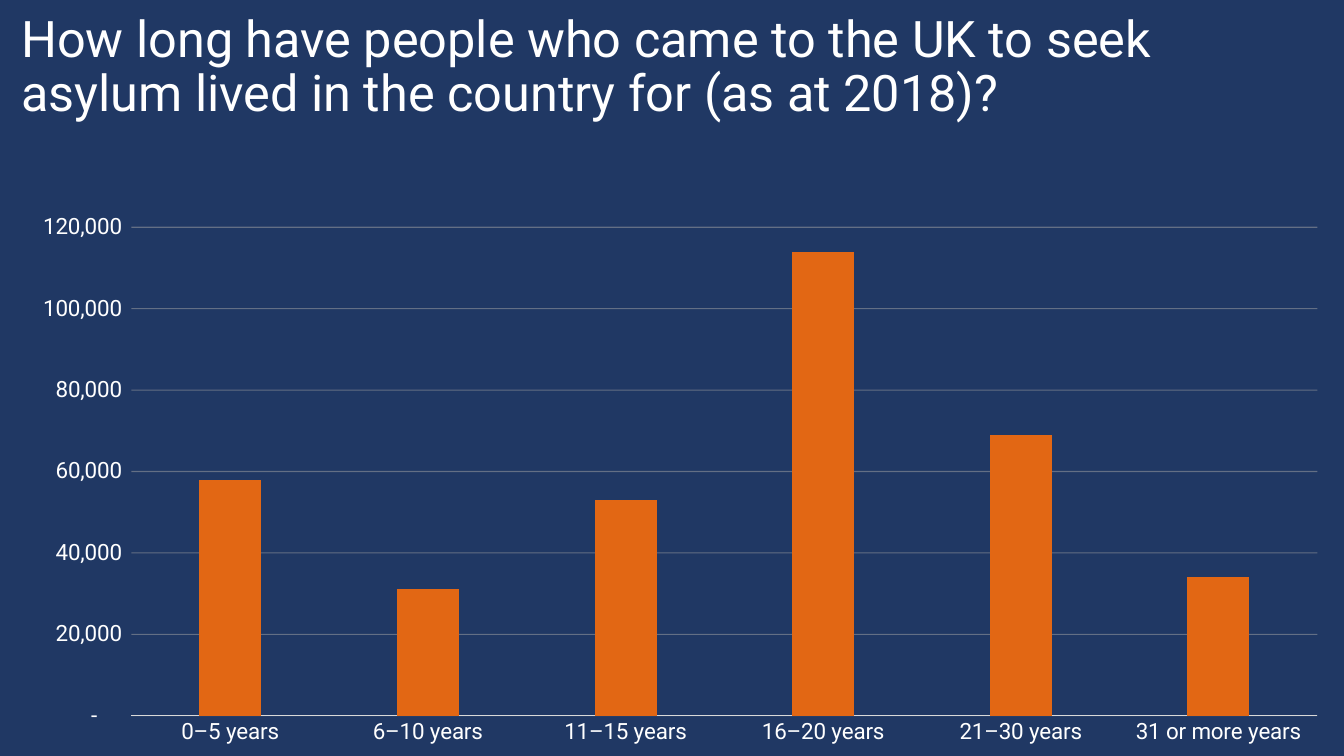
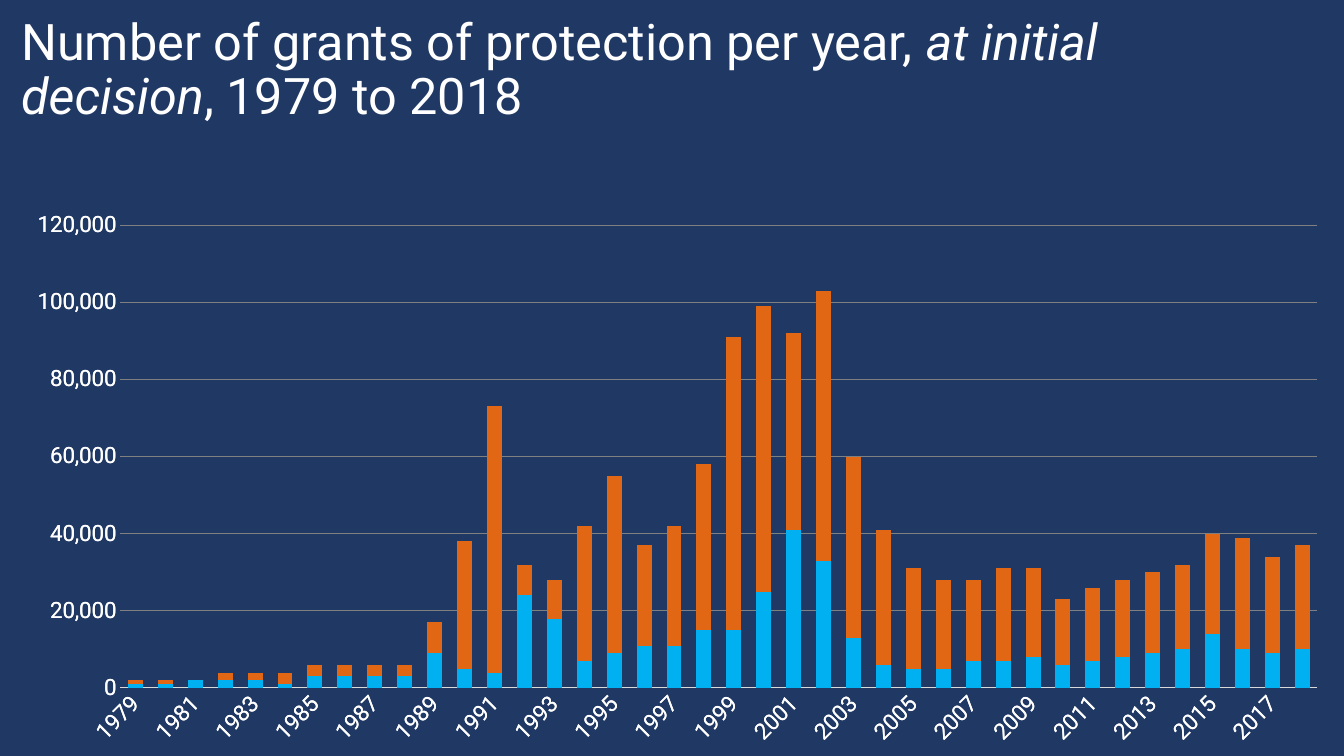
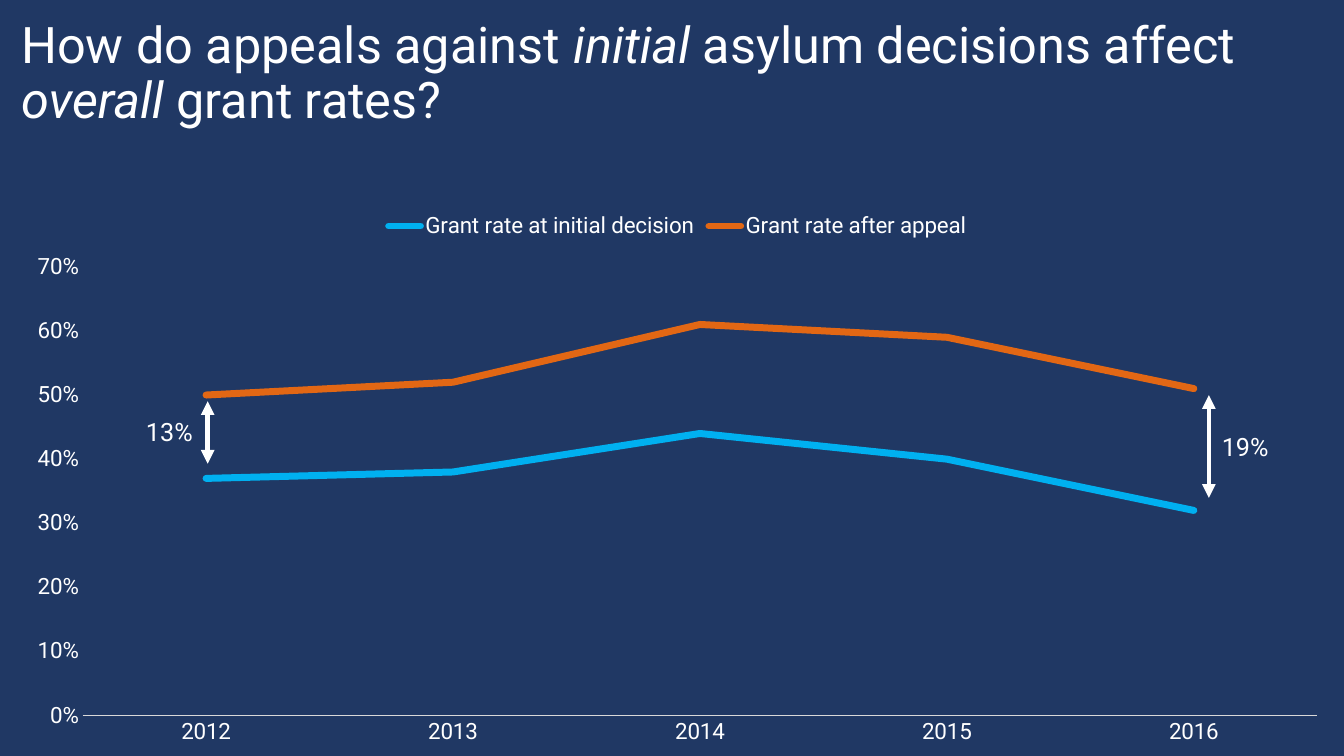
from collections import namedtuple
from dataclasses import dataclass

from lxml.etree import SubElement
from pptx import Presentation
from pptx.chart.data import CategoryChartData
from pptx.dml.color import RGBColor
from pptx.enum.chart import XL_CHART_TYPE, XL_LEGEND_POSITION, XL_MARKER_STYLE, XL_TICK_MARK
from pptx.enum.shapes import MSO_CONNECTOR
from pptx.enum.text import MSO_ANCHOR, MSO_AUTO_SIZE, PP_ALIGN
from pptx.oxml.ns import qn
from pptx.util import Inches, Pt

Box = namedtuple("Box", "left top width height")


@dataclass(frozen=True)
class Theme:
    font: str = "Roboto"
    navy: str = "203864"
    white: str = "FFFFFF"
    orange: str = "E26714"
    blue: str = "00B0F0"
    axis: str = "D9D9D9"
    light_grid: str = "A6A6A6"
    dark_grid: str = "808080"
    title_size: int = 36
    label_size: int = 18
    chart_size: int = 16


THEME = Theme()
CHART_BOX = Box(0.11, 2, 13.22, 5.5)

STAY_CHART_BOX = Box(0.11, 2.02, 13.22, 5.48)
STAY_LENGTHS = {
    "0–5 years": 58000,
    "6–10 years": 31000,
    "11–15 years": 53000,
    "16–20 years": 114000,
    "21–30 years": 69000,
    "31 or more years": 34000,
}
DASH_FOR_ZERO = '_-* #,##0_-;\\-* #,##0_-;_-* "-"??_-;_-@_-'

GRANT_YEARS = [str(year) for year in range(1979, 2019)]
ALL_THOUSANDS = [
    2, 2, 2, 4, 4, 4, 6, 6, 6, 6, 17, 38, 73, 32, 28, 42, 55, 37, 42, 58,
    91, 99, 92, 103, 60, 41, 31, 28, 28, 31, 31, 23, 26, 28, 30, 32, 40, 39, 34, 37,
]
INITIAL_THOUSANDS = [
    1, 1, 2, 2, 2, 1, 3, 3, 3, 3, 9, 5, 4, 24, 18, 7, 9, 11, 11, 15,
    15, 25, 41, 33, 13, 6, 5, 5, 7, 7, 8, 6, 7, 8, 9, 10, 14, 10, 9, 10,
]

RATE_YEARS = ["2012", "2013", "2014", "2015", "2016"]
GRANT_RATES = {
    "Grant rate at initial decision": [0.37, 0.38, 0.44, 0.4, 0.32],
    "Grant rate after appeal": [0.5, 0.52, 0.61, 0.59, 0.51],
}


def colour(value):
    return RGBColor.from_string(value)


def style_font(font, size=THEME.chart_size, italic=None):
    font.name = THEME.font
    font.size = Pt(size)
    font.color.rgb = colour(THEME.white)
    font.italic = italic


def write(para, text, **style):
    span = para.add_run()
    span.text = text
    style_font(span.font, **style)


def place(box):
    return [Inches(length) for length in box]


def add_page(deck, box, *title_parts):
    page = deck.slides.add_slide(deck.slide_layouts.get_by_name("Title Only"))
    title = page.shapes.title
    title.left, title.top, title.width, title.height = place(box)
    frame = title.text_frame
    frame.auto_size = MSO_AUTO_SIZE.NONE
    frame.vertical_anchor = MSO_ANCHOR.MIDDLE
    para = frame.paragraphs[0]
    para.alignment = PP_ALIGN.LEFT
    para.line_spacing = 0.9
    for index, text in enumerate(title_parts):
        write(para, text, size=THEME.title_size, italic=index % 2 == 1)
    return page


def add_chart(page, box, kind, categories, series, maximum, step, number_format):
    chart_data = CategoryChartData()
    chart_data.categories = categories
    for name, values in series.items():
        chart_data.add_series(name, values)
    chart = page.shapes.add_chart(kind, *place(box), chart_data).chart
    chart.has_title = False
    chart.has_legend = False
    style_font(chart.font)

    for axis in (chart.category_axis, chart.value_axis):
        axis.major_tick_mark = XL_TICK_MARK.NONE
        axis.minor_tick_mark = XL_TICK_MARK.NONE
        axis.has_major_gridlines = False
        style_font(axis.tick_labels.font)
    chart.category_axis.format.line.color.rgb = colour(THEME.axis)
    chart.category_axis.format.line.width = Pt(0.75)

    value_axis = chart.value_axis
    value_axis.format.line.fill.background()
    value_axis.minimum_scale = 0
    value_axis.maximum_scale = maximum
    value_axis.major_unit = step
    value_axis.tick_labels.number_format = number_format
    value_axis.tick_labels.number_format_is_linked = False
    return chart


def add_columns(page, box, categories, values, fill, gap, number_format="#,##0",
                grid=None, grid_opacity=100, slanted=False):
    chart = add_chart(page, box, XL_CHART_TYPE.COLUMN_CLUSTERED, categories,
                      {"Series 1": values}, 120000, 20000, number_format)
    plot = chart.plots[0]
    plot.vary_by_categories = False
    plot.gap_width = gap
    plot.overlap = -27
    columns = plot.series[0].format.fill
    columns.solid()
    columns.fore_color.rgb = colour(fill)
    if grid:
        line = chart.value_axis.major_gridlines.format.line
        line.color.rgb = colour(grid)
        line.width = Pt(0.75)
        grid_colour = chart.element.xpath(".//c:majorGridlines//a:srgbClr")[0]
        SubElement(grid_colour, qn("a:alpha")).set("val", str(grid_opacity * 1000))
    if slanted:
        chart.element.xpath(".//c:catAx/c:txPr/a:bodyPr")[0].set("rot", "-2700000")


def add_rate_lines(page, box):
    chart = add_chart(page, box, XL_CHART_TYPE.LINE, RATE_YEARS, GRANT_RATES, 0.7, 0.1, "0%")
    chart.has_legend = True
    chart.legend.position = XL_LEGEND_POSITION.TOP
    chart.legend.include_in_layout = False
    style_font(chart.legend.font)
    for rates, line_colour in zip(chart.plots[0].series, (THEME.blue, THEME.orange)):
        rates.smooth = False
        rates.marker.style = XL_MARKER_STYLE.NONE
        rates.format.line.color.rgb = colour(line_colour)
        rates.format.line.width = Pt(5)
    for outline in chart.element.xpath(".//c:ser/c:spPr/a:ln"):
        outline.set("cap", "rnd")


def add_rate_gap(page, box, text, label_left, label_top):
    left, top, width, height = box
    arrow = page.shapes.add_connector(
        MSO_CONNECTOR.STRAIGHT, *place((left, top, left + width, top + height)))
    arrow.line.color.rgb = colour(THEME.white)
    arrow.line.width = Pt(3.25)
    outline = arrow.element.xpath(".//a:ln")[0]
    for end in ("a:headEnd", "a:tailEnd"):
        SubElement(outline, qn(end)).set("type", "triangle")
    SubElement(arrow.element.spPr, qn("a:effectLst"))

    label = page.shapes.add_textbox(*place((left + label_left, top + label_top, 1.16, 0.4)))
    frame = label.text_frame
    frame.word_wrap = True
    frame.auto_size = MSO_AUTO_SIZE.SHAPE_TO_FIT_TEXT
    write(frame.paragraphs[0], text, size=THEME.label_size)


def build_stay_page(deck):
    page = add_page(
        deck, Box(0.11, 0.04, 12.89, 1.27),
        "How long have people who came to the UK to seek asylum lived in the country"
        " for (as at 2018)?")
    add_columns(page, STAY_CHART_BOX, list(STAY_LENGTHS), list(STAY_LENGTHS.values()),
                THEME.orange, 219, DASH_FOR_ZERO, THEME.light_grid, 50)


def build_grants_page(deck):
    page = add_page(deck, Box(0.11, 0, 12.49, 1.41),
                    "Number of grants of protection per year, ", "at initial decision",
                    ", 1979 to 2018")
    layers = (
        (ALL_THOUSANDS, THEME.orange, THEME.dark_grid),
        (INITIAL_THOUSANDS, THEME.blue, None),
    )
    for thousands, fill, grid in layers:
        add_columns(page, CHART_BOX, GRANT_YEARS, [count * 1000 for count in thousands],
                    fill, 100, grid=grid, slanted=True)


def build_appeals_page(deck):
    page = add_page(deck, Box(0.11, 0.27, 12.93, 0.94),
                    "How do appeals against ", "initial", " asylum decisions affect ",
                    "overall", " grant rates?")
    add_rate_lines(page, CHART_BOX)
    left, top = CHART_BOX.left, CHART_BOX.top
    add_rate_gap(page, Box(left + 11.88, top + 1.92, 0, 1.02), "19%", 0.03, 0.31)
    add_rate_gap(page, Box(left + 1.95, top + 1.98, 0, 0.62), "13%", -0.71, 0.1)


def main():
    deck = Presentation()
    deck.slide_width, deck.slide_height = Inches(13.33), Inches(7.5)
    backdrop = deck.slide_master.background.fill
    backdrop.solid()
    backdrop.fore_color.rgb = colour(THEME.navy)
    build_stay_page(deck)
    build_grants_page(deck)
    build_appeals_page(deck)
    deck.save("out.pptx")


if __name__ == "__main__":
    main()
